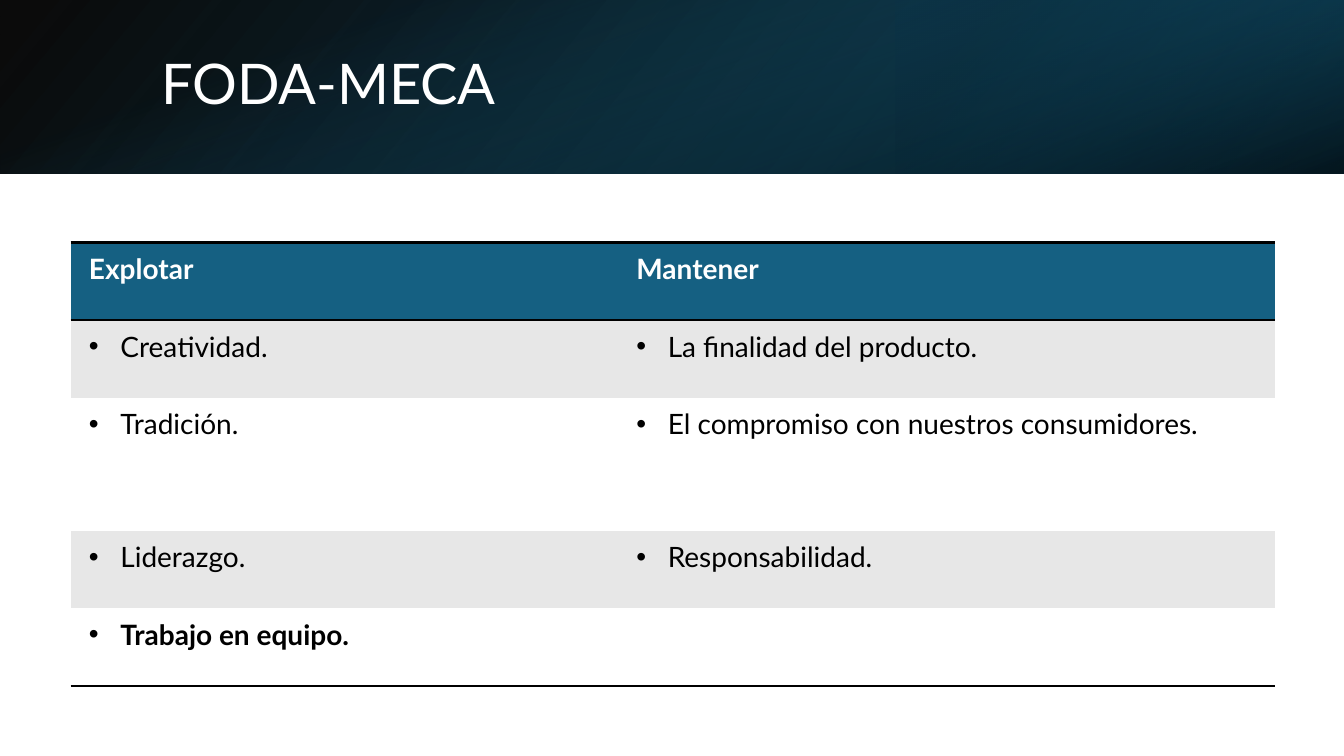
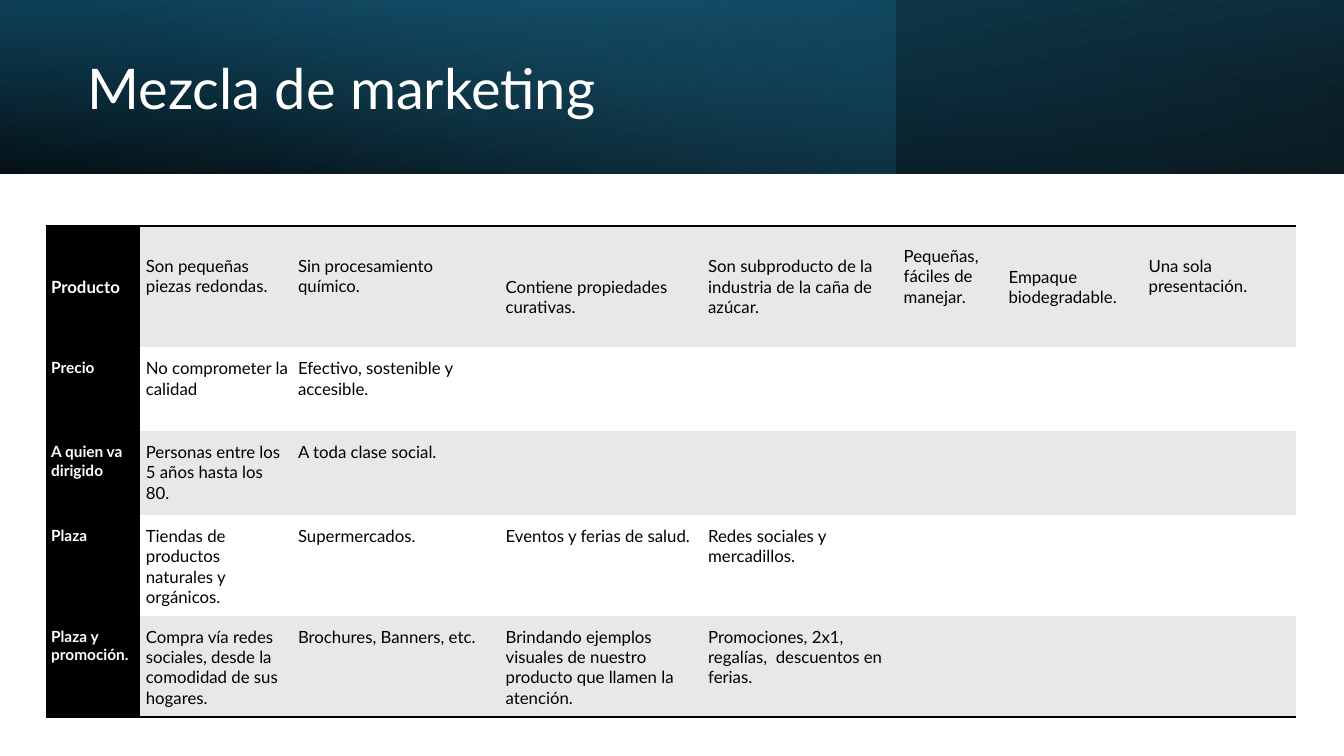
from lxml import etree
from pptx import Presentation
from pptx.dml.color import RGBColor
from pptx.enum import shapes, text
from pptx.oxml import ns
from pptx.util import Pt

BLACK = RGBColor(0x00, 0x00, 0x00)
WHITE = RGBColor(0xFF, 0xFF, 0xFF)
TEAL = RGBColor(0x15, 0x60, 0x82)
DEEP_TEAL = RGBColor(0x10, 0x48, 0x62)
NIGHT = RGBColor(0x0B, 0x30, 0x41)
SKY = RGBColor(0x46, 0xB1, 0xE1)
SILVER = RGBColor(0xE7, 0xE7, 0xE7)
PEARL = RGBColor(0xE8, 0xE8, 0xE8)

FONT = "Lato"
WIDTH, HEIGHT, BAND = 960, 540, 124
FULL_BAND = (0, 0, WIDTH, BAND)
UPRIGHT_BAND = ((WIDTH - BAND) / 2, (BAND - WIDTH) / 2, BAND, WIDTH)
NO_STYLE = "{2D5ABB26-0587-4C30-8999-92F81FD0307C}"
LINE = 14.6

FODA_ROWS = [
    ["Explotar", "Mantener"],
    ["Creatividad.", "La finalidad del producto."],
    ["Tradición.", "El compromiso con nuestros consumidores."],
    ["Liderazgo.", "Responsabilidad."],
    ["Trabajo en equipo.", ""],
]

MIX_ROWS = [
    ["Producto", "Son pequeñas piezas redondas.", "Sin procesamiento químico.",
     "Contiene propiedades curativas.",
     "Son subproducto de la industria de la caña de azúcar.",
     "Pequeñas, fáciles de manejar.", "Empaque biodegradable.",
     "Una sola presentación."],
    ["Precio", "No comprometer la calidad", "Efectivo, sostenible y accesible."],
    ["A quien va dirigido", "Personas entre los 5 años hasta los 80.",
     "A toda clase social."],
    ["Plaza", "Tiendas de productos naturales y orgánicos.", "Supermercados.",
     "Eventos y ferias de salud.", "Redes sociales y mercadillos."],
    ["Plaza y promoción.",
     "Compra vía redes sociales, desde la comodidad de sus hogares.",
     "Brochures, Banners, etc.",
     "Brindando ejemplos visuales de nuestro producto que llamen la atención.",
     "Promociones, 2x1, regalías,  descuentos en ferias."],
]
RAISED_COLUMNS = (1, 2, 5, 7)
LOWERED_COLUMN = 3


def points(values):
    return [Pt(value) for value in values]


def format_text(frame, size, color, bold=False):
    for paragraph in frame.paragraphs:
        for run in paragraph.runs:
            run.font.name = FONT
            run.font.size = Pt(size)
            run.font.bold = bold
            run.font.color.rgb = color


def add_glow(slide, box, stops, angle, rotation=0, flipped=False):
    glow = slide.shapes.add_shape(shapes.MSO_SHAPE.RECTANGLE, *points(box))
    glow.shadow.inherit = False
    glow.line.fill.background()
    glow.rotation = rotation
    if flipped:
        glow._element.spPr.find(ns.qn("a:xfrm")).set("flipH", "1")
    glow.fill.gradient()
    glow.fill.gradient_angle = 360 - angle
    for stop, (position, color, _) in zip(glow.fill.gradient_stops, stops):
        stop.position = position / 100
        stop.color.rgb = color
    tints = glow._element.spPr.iter(ns.qn("a:srgbClr"))
    for tint, (_, _, opacity) in zip(tints, stops):
        etree.SubElement(tint, ns.qn("a:alpha")).set("val", str(opacity * 1000))


def add_title(slide, box, wording):
    frame = slide.shapes.add_textbox(*points(box)).text_frame
    frame.word_wrap = True
    frame.vertical_anchor = text.MSO_ANCHOR.MIDDLE
    frame.text = wording
    frame.paragraphs[0].line_spacing = 0.9
    format_text(frame, 40, WHITE)


def add_grid(slide, origin, widths, heights):
    box = (*origin, sum(widths), sum(heights))
    grid = slide.shapes.add_table(len(heights), len(widths), *points(box)).table
    grid._tbl.tblPr.find(ns.qn("a:tableStyleId")).text = NO_STYLE
    for column, width in zip(grid.columns, widths):
        column.width = Pt(width)
    for row, height in zip(grid.rows, heights):
        row.height = Pt(height)
    return grid


def add_border(cell, side, width):
    border = etree.SubElement(cell._tc.get_or_add_tcPr(), ns.qn("a:ln" + side))
    border.set("w", str(Pt(width)))
    fill = etree.SubElement(border, ns.qn("a:solidFill"))
    etree.SubElement(fill, ns.qn("a:srgbClr")).set("val", str(BLACK))


def fill_cell(cell, wording, color, insets):
    cell.fill.solid()
    cell.fill.fore_color.rgb = color
    (cell.margin_left, cell.margin_top,
     cell.margin_right, cell.margin_bottom) = points(insets)
    cell.text_frame.text = wording


def add_bullet(paragraph, indent):
    properties = paragraph._p.get_or_add_pPr()
    properties.set("marL", str(Pt(indent)))
    properties.set("indent", str(-Pt(indent)))
    etree.SubElement(properties, ns.qn("a:buFont")).set("typeface", "Arial")
    etree.SubElement(properties, ns.qn("a:buChar")).set("char", "•")


def add_foda_table(slide, origin):
    heights = [55.4, 55.4, 95, 55.4, 55.4]
    grid = add_grid(slide, origin, [391, 469.4], heights)
    last = len(FODA_ROWS) - 1
    for r, wordings in enumerate(FODA_ROWS):
        for c, wording in enumerate(wordings):
            cell = grid.cell(r, c)
            if r == 0:
                add_border(cell, "T", 2)
            if r in (0, last):
                add_border(cell, "B", 2)
            color = TEAL if r == 0 else SILVER if r % 2 else WHITE
            fill_cell(cell, wording, color, (13, 6.5, 13, 6.5))
            if r and wording:
                add_bullet(cell.text_frame.paragraphs[0], 22.5)
            format_text(cell.text_frame, 20, BLACK if r else WHITE,
                        r == 0 or (r == last and c == 0))


def add_mix_table(slide, origin):
    widths = [67.7, 108.7, 148.3, 144.7, 139.7, 74.9, 100.1, 109.4]
    grid = add_grid(slide, origin, widths, [86.4, 60, 60, 72, 72])
    last = len(MIX_ROWS) - 1
    for r, wordings in enumerate(MIX_ROWS):
        for c in range(len(widths)):
            cell = grid.cell(r, c)
            wording = wordings[c] if c < len(wordings) else ""
            top = 8 if r else 5.8
            bottom = 5.8
            if r == 0:
                add_border(cell, "T", 1.5)
                cell.vertical_anchor = text.MSO_ANCHOR.MIDDLE
                top += LINE if c == LOWERED_COLUMN else 0
                bottom += LINE if c in RAISED_COLUMNS else 0
            if r == last:
                add_border(cell, "B", 1.5)
            color = BLACK if c == 0 else WHITE if r % 2 else PEARL
            fill_cell(cell, wording, color, (4, top, 3, bottom))
            format_text(cell.text_frame, 11 if c == 0 and r else 12,
                        BLACK if c else WHITE, c == 0)


def build_foda_slide(slide):
    add_glow(slide, FULL_BAND, [(0, BLACK, 96), (100, DEEP_TEAL, 100)],
             140, flipped=True)
    add_glow(slide, (640, 0, 320, BAND), [(19, NIGHT, 68), (100, TEAL, 79)],
             320, rotation=180, flipped=True)
    add_glow(slide, UPRIGHT_BAND, [(23, TEAL, 0), (99, BLACK, 74)],
             340, rotation=90)
    add_title(slide, (108, 27, 790, 69), "FODA-MECA")
    add_foda_table(slide, (50.5, 173.3))


def build_mix_slide(slide):
    add_glow(slide, FULL_BAND, [(0, BLACK, 96), (100, DEEP_TEAL, 100)],
             100, rotation=180, flipped=True)
    add_glow(slide, (0, 0, 640, BAND), [(0, TEAL, 41), (74, SKY, 0)], 140)
    add_glow(slide, FULL_BAND, [(0, BLACK, 63), (78, TEAL, 15)],
             260, flipped=True)
    add_title(slide, (55.5, 19.5, 556, 91.5), "Mezcla de marketing")
    add_mix_table(slide, (32.5, 161.5))


def main():
    deck = Presentation()
    deck.slide_width, deck.slide_height = Pt(WIDTH), Pt(HEIGHT)
    for build in (build_foda_slide, build_mix_slide):
        build(deck.slides.add_slide(deck.slide_layouts[6]))
    deck.save("out.pptx")


if __name__ == "__main__":
    main()
